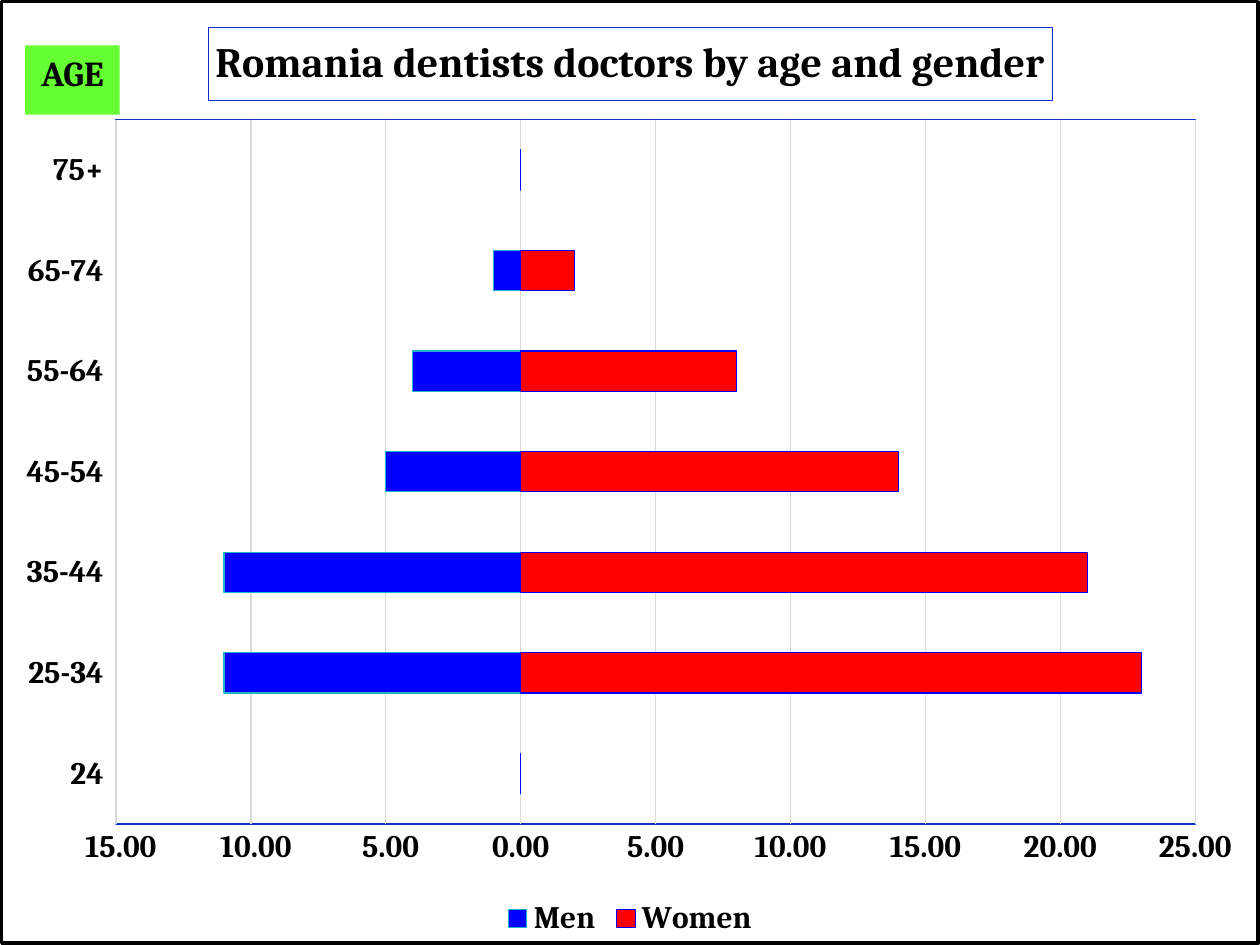
from pptx import Presentation, util as u
from pptx.chart.data import CategoryChartData
from pptx.dml.color import RGBColor
from pptx.enum import chart as ch, shapes, text
from pptx.oxml import parse_xml
from pptx.oxml.ns import nsdecls, qn

FONT = "Cambria"
WIDE, HIGH = 10, 7.5
HUES = {"ink": "000000", "paper": "FFFFFF", "men": "0000FF", "women": "FF0000",
        "teal": "21B2C9", "grid": "D9D9D9", "frame": "0F32C6", "tag": "66FF33"}
AGES = ["24", "25-34", "35-44", "45-54", "55-64", "65-74", "75+"]
MEN = [0, -11, -11, -5, -4, -1, 0]
WOMEN = [0, 23, 21, 14, 8, 2, 0]


def hue(name):
    return RGBColor.from_string(HUES[name])


def paint(item, fill):
    item.fill.solid()
    item.fill.fore_color.rgb = hue(fill)


def edge(line, color, width=0.75):
    line.color.rgb = hue(color)
    line.width = u.Pt(width)


def style(font, size):
    font.name, font.size, font.bold = FONT, u.Pt(size), True
    font.color.rgb = hue("ink")


def place(node, index, **spots):
    """Give a chart part a manual layout; spots are in inches."""
    for old in node.findall(qn("c:layout")):
        node.remove(old)
    inner = '<c:layoutTarget val="inner"/>' if "w" in spots else ""
    modes = "".join(f'<c:{k}Mode val="edge"/>' for k in "xy")
    vals = "".join(f'<c:{k} val="{v / (WIDE if k in "xw" else HIGH)}"/>'
                   for k, v in spots.items())
    node.insert(index, parse_xml(
        f'<c:layout {nsdecls("c")}><c:manualLayout>{inner}{modes}{vals}'
        '</c:manualLayout></c:layout>'))


def frame(fill, line, width):
    """Return shape properties for a part of the chart."""
    area = f'<a:solidFill><a:srgbClr val="{HUES[fill]}"/></a:solidFill>' if fill else "<a:noFill/>"
    return parse_xml(
        f'<c:spPr {nsdecls("c", "a")}>{area}<a:ln w="{u.Pt(width)}"><a:solidFill>'
        f'<a:srgbClr val="{HUES[line]}"/></a:solidFill></a:ln></c:spPr>')


def add_title(chart):
    chart.has_title = True
    title = chart.chart_title
    para = title.text_frame.paragraphs[0]
    para.text = "Romania dentists doctors by age and gender"
    style(para.font, 24)
    title.include_in_layout = False
    edge(title.format.line, "frame", 0.25)
    place(title._element, 1, x=1.64, y=0.2)


def set_axes(chart):
    ages, share = chart.category_axis, chart.value_axis
    for axis in (ages, share):
        axis.major_tick_mark = axis.minor_tick_mark = ch.XL_TICK_MARK.NONE
        style(axis.tick_labels.font, 18)
    ages.tick_label_position = ch.XL_TICK_LABEL_POSITION.LOW
    edge(ages.format.line, "grid")
    share.minimum_scale, share.maximum_scale, share.major_unit = -15, 25, 5
    share.format.line.fill.background()
    share.tick_labels.number_format = "0.00"
    share.tick_labels.number_format_is_linked = False
    edge(share.major_gridlines.format.line, "grid")


def add_bars(slide):
    data = CategoryChartData(number_format="0.00")
    data.categories = AGES
    data.add_series("Men", MEN)
    data.add_series("Women", WOMEN)
    chart = slide.shapes.add_chart(
        ch.XL_CHART_TYPE.BAR_STACKED, 0, 0, u.Inches(WIDE), u.Inches(HIGH), data).chart
    chart.font.name, chart.font.size = FONT, u.Pt(10)
    chart.font.color.rgb = hue("ink")
    add_title(chart)
    set_axes(chart)
    plot = chart.plots[0]
    plot.gap_width, plot.overlap, plot.vary_by_categories = 150, 100, False
    for bars, fill, line in zip(plot.series, ("men", "women"), ("teal", "men")):
        bars.invert_if_negative = False
        paint(bars.format, fill)
        edge(bars.format.line, line)
    chart.has_legend = True
    chart.legend.position = ch.XL_LEGEND_POSITION.BOTTOM
    chart.legend.include_in_layout = False
    style(chart.legend.font, 18)
    root = chart._chartSpace
    area = root.find(qn("c:chart")).find(qn("c:plotArea"))
    place(area, 0, x=0.91, y=0.94, w=8.59, h=5.61)
    area.append(frame(None, "frame", 0.75))
    root.find(qn("c:txPr")).addprevious(frame("paper", "ink", 2))


def add_box(slide, left, top, width, height, fill):
    box = slide.shapes.add_shape(
        shapes.MSO_SHAPE.RECTANGLE, *map(u.Inches, (left, top, width, height)))
    box.shadow.inherit = False
    paint(box, fill)
    box.line.fill.background()
    return box


def add_tag(slide):
    body = add_box(slide, 0.2, 0.36, 0.75, 0.55, "tag").text_frame
    body.word_wrap = False
    body.vertical_anchor = text.MSO_ANCHOR.TOP
    para = body.paragraphs[0]
    para.text = "AGE"
    para.alignment = text.PP_ALIGN.CENTER
    style(para.font, 20)


def main():
    prs = Presentation()
    prs.slide_width, prs.slide_height = u.Inches(WIDE), u.Inches(HIGH)
    slide = prs.slides.add_slide(prs.slide_layouts[6])
    add_bars(slide)
    add_tag(slide)
    # White patches cover the minus signs left of zero
    for left in (0.51, 1.61, 2.72):
        add_box(slide, left, 6.66, 0.16, 0.24, "paper")
    prs.save("out.pptx")


if __name__ == "__main__":
    main()
